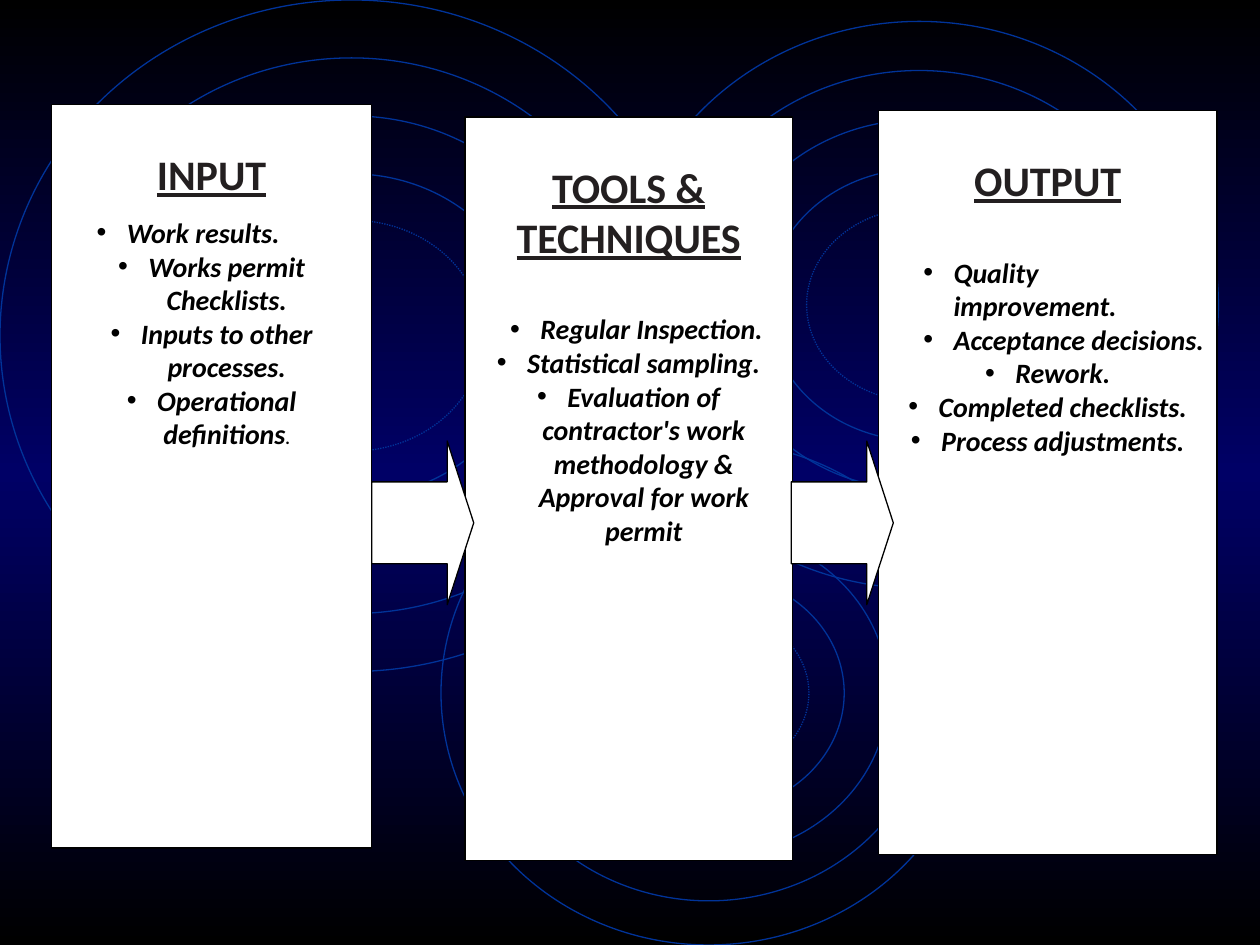
from copy import deepcopy

from lxml import etree
from pptx import Presentation
from pptx.dml.color import RGBColor
from pptx.enum import dml, shapes, text
from pptx.oxml import ns
from pptx.util import Inches, Pt

BLACK = RGBColor(0x00, 0x00, 0x00)
WHITE = RGBColor(0xFF, 0xFF, 0xFF)
NAVY = RGBColor(0x00, 0x00, 0x66)
RING_BLUE = RGBColor(0x00, 0x33, 0x99)
HEADING = RGBColor(0x23, 0x1F, 0x20)

CENTER = text.PP_ALIGN.CENTER
JUSTIFY = text.PP_ALIGN.JUSTIFY

RING_SETS = [(0, 0, 5.58, 5.33), (3.5, 3.5, 4.25, 4), (4.92, 0.17, 4.75, 4.5)]
RING_STEPS = [0.46, 0.35, 0.39]
COLUMNS = [
    ((0.41, 0.83, 2.54, 5.9), "INPUT", 9.4, [
        ("Work results.", JUSTIFY),
        ("Works permit Checklists.", CENTER),
        ("Inputs to other processes.", CENTER),
        ("Operational definitions", CENTER),
    ]),
    ((3.69, 0.93, 2.6, 5.9), "TOOLS & TECHNIQUES", 28.5, [
        ("Regular Inspection.", JUSTIFY),
        ("Statistical sampling.", CENTER),
        ("Evaluation of contractor's work methodology & Approval for work permit", CENTER),
    ]),
    ((6.97, 0.88, 2.69, 5.9), "OUTPUT", 28.5, [
        ("Quality improvement.", JUSTIFY),
        ("Acceptance decisions.", JUSTIFY),
        ("Rework.", CENTER),
        ("Completed checklists.", CENTER),
        ("Process adjustments.", CENTER),
    ]),
]


class ProcessSlide:
    """Holds the style and the current slide of a process diagram."""

    font_name = "Calibri"
    line_width = Pt(0.75)
    hanging = Inches(0.24)

    def __init__(self, presentation):
        self.slide = presentation.slides.add_slide(presentation.slide_layouts[6])

    def background(self, edge, middle):
        fill = self.slide.background.fill
        fill.gradient()
        fill.gradient_angle = 90
        stop_list = self.slide.element.find(".//" + ns.qn("a:gsLst"))
        stop_list.insert(1, deepcopy(stop_list[0]))
        for stop, position, color in zip(fill.gradient_stops, (0, 0.5, 1), (edge, middle, edge)):
            stop.position = position
            stop.color.rgb = color

    def shape(self, kind, box, line_color, fill_color=None):
        shape = self.slide.shapes.add_shape(kind, *map(Inches, box))
        shape.shadow.inherit = False
        if fill_color is None:
            shape.fill.background()
        else:
            shape.fill.solid()
            shape.fill.fore_color.rgb = fill_color
        shape.line.color.rgb = line_color
        shape.line.width = self.line_width
        return shape

    def rings(self, box, step):
        left, top, width, height = box
        for factor in (0, 1, 2, 3, 3.8):
            inset = factor * step
            ring = self.shape(
                shapes.MSO_SHAPE.OVAL,
                (left + inset, top + inset, width - 2 * inset, height - 2 * inset),
                RING_BLUE,
            )
        ring.line.dash_style = dml.MSO_LINE.ROUND_DOT

    def format_run(self, run, size, color):
        run.font.name = self.font_name
        run.font.size = Pt(size)
        run.font.bold = True
        run.font.color.rgb = color

    def bullet(self, paragraph, content, alignment):
        paragraph.text = content
        paragraph.alignment = alignment
        properties = paragraph._p.get_or_add_pPr()
        margin = Inches(0.5) if alignment == JUSTIFY else self.hanging
        properties.set("marL", str(margin))
        properties.set("indent", str(-self.hanging))
        color = etree.SubElement(properties, ns.qn("a:buClr"))
        etree.SubElement(color, ns.qn("a:srgbClr"), val=str(BLACK))
        etree.SubElement(properties, ns.qn("a:buFont"), typeface="Arial")
        etree.SubElement(properties, ns.qn("a:buChar"), char="•")
        run = paragraph.runs[0]
        self.format_run(run, 16, BLACK)
        run.font.italic = True

    def column(self, box, heading, gap, items):
        frame = self.shape(shapes.MSO_SHAPE.RECTANGLE, box, BLACK, WHITE).text_frame
        frame.word_wrap = True
        frame.vertical_anchor = text.MSO_ANCHOR.TOP
        frame.margin_top = Inches(0.35)
        frame.text = heading
        title = frame.paragraphs[0]
        title.alignment = CENTER
        title.space_after = Pt(gap)
        self.format_run(title.runs[0], 24, HEADING)
        title.runs[0].font.underline = True
        for content, alignment in items:
            self.bullet(frame.add_paragraph(), content, alignment)
        return frame

    def small_ending(self, paragraph, content):
        run = paragraph.add_run()
        run.text = content
        self.format_run(run, 10, BLACK)
        run.font.italic = True

    def arrow(self, left):
        arrow = self.shape(shapes.MSO_SHAPE.RIGHT_ARROW, (left, 3.5, 0.81, 1.3), BLACK, WHITE)
        arrow.adjustments[0] = 0.5
        arrow.adjustments[1] = 0.26


def main():
    presentation = Presentation()
    presentation.slide_width = Inches(10)
    presentation.slide_height = Inches(7.5)
    process = ProcessSlide(presentation)
    process.background(BLACK, NAVY)
    for box, step in zip(RING_SETS, RING_STEPS):
        process.rings(box, step)
    frames = [process.column(*column) for column in COLUMNS]
    process.small_ending(frames[0].paragraphs[-1], ".")
    for left in (2.95, 6.28):
        process.arrow(left)
    presentation.save("out.pptx")


if __name__ == "__main__":
    main()
